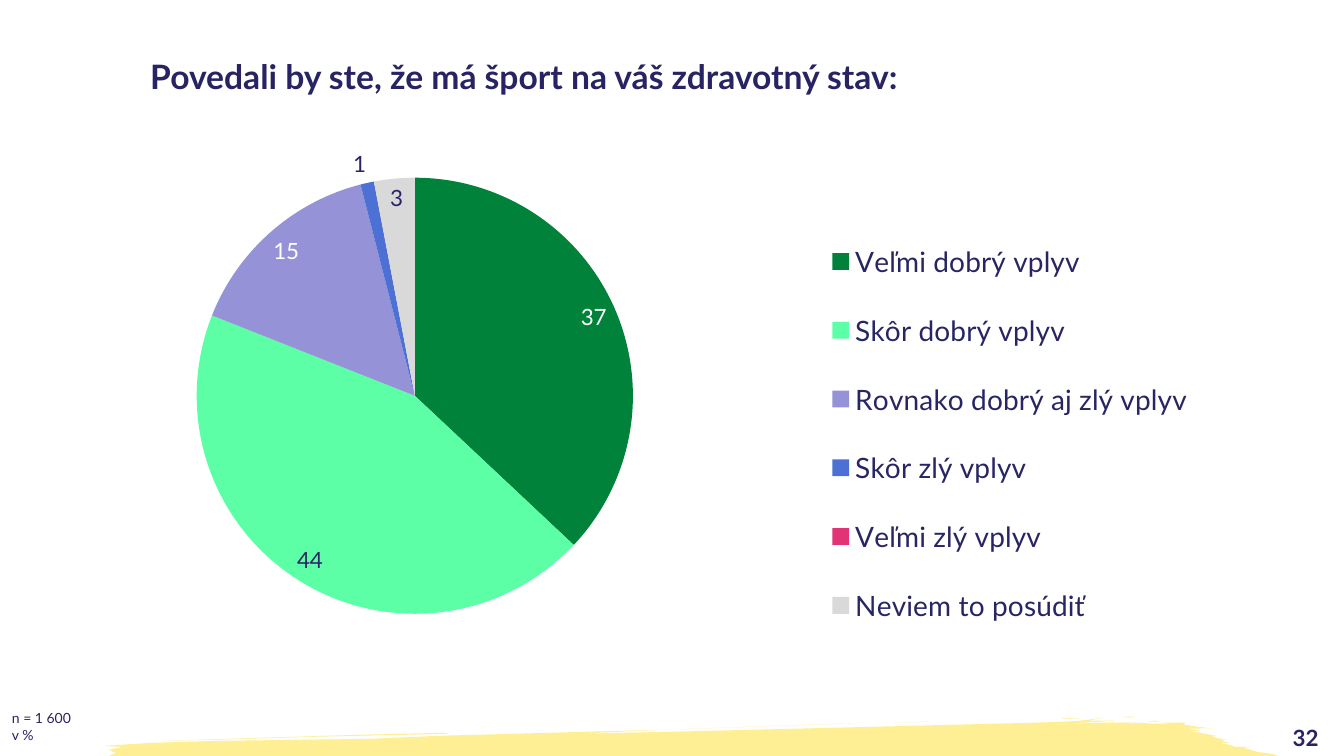
"""Build the slide with a pie chart on how sport affects health."""
import pptx
import pptx.chart.data
import pptx.dml.color
import pptx.enum.chart
import pptx.enum.text
import pptx.oxml
import pptx.oxml.ns
import pptx.util

Inches = pptx.util.Inches
Pt = pptx.util.Pt
Align = pptx.enum.text.PP_ALIGN
Anchor = pptx.enum.text.MSO_ANCHOR
LabelPosition = pptx.enum.chart.XL_LABEL_POSITION

TITLE = "Povedali by ste, že má šport na váš zdravotný stav:"
ANSWERS = [
    ("Veľmi dobrý vplyv", 37, "00823B"),
    ("Skôr dobrý vplyv", 44, "5DFFA6"),
    ("Rovnako dobrý aj zlý vplyv", 15, "9592D7"),
    ("Skôr zlý vplyv", 1, "4C70D4"),
    ("Veľmi zlý vplyv", 0, "E13377"),
    ("Neviem to posúdiť", 3, "D9D9D9"),
]
WHITE_LABELS = (0, 2)
HIDDEN_LABEL = 4
NOTE = ["n = 1 600", "v %"]
PAGE_NUMBER = ["32"]

THEME = {
    "font": "Lato", "title": "282463", "text": "282564", "white": "FFFFFF", "brush": "FEEF95",
    "title_size": 24, "legend_size": 20, "label_size": 16, "number_size": 16, "note_size": 10,
}
TITLE_BOX = (1.39, 0.26, 11, 1.04)
NUMBER_BOX = (12.56, 7.14, 0.78, 0.36)
CHART_BOX = (0.38, 1.42, 12.68, 5.54)
NOTE_BOX = (0.02, 6.99, 1.19, 0.44)
PLOT_LAYOUT = {"layoutTarget": "inner", "xMode": "edge", "yMode": "edge",
               "x": 0.091, "y": 0.062, "w": 0.407, "h": 0.781}
LEGEND_LAYOUT = {"xMode": "edge", "yMode": "edge", "x": 0.61, "y": 0.12, "w": 0.3, "h": 0.8}

BRUSH_STROKES = [
    [(1.15, 7.47), (1.08, 7.5), (0.84, 7.52), (1.05, 7.53), (1.15, 7.55), (1.04, 7.55),
     (1.16, 7.56), (1.13, 7.61), (1.35, 7.61), (1.3, 7.65), (1.36, 7.7), (1.3, 7.73),
     (1.44, 7.74), (1.52, 7.77), (1.73, 7.81), (1.82, 7.85), (2.77, 7.89), (4.04, 7.87),
     (5.64, 7.84), (7.24, 7.8), (8.76, 7.76), (10.14, 7.71), (11.53, 7.69), (12.21, 7.62),
     (12.43, 7.64), (12.6, 7.59), (12.5, 7.56), (12.35, 7.54), (12.55, 7.53), (12.66, 7.51),
     (12.58, 7.5), (12.68, 7.5), (12.62, 7.48), (12.47, 7.46), (12.34, 7.42), (12.4, 7.41),
     (12.25, 7.41), (12.2, 7.39), (12.1, 7.37), (12.19, 7.37), (12.11, 7.35), (12.16, 7.34),
     (12.02, 7.31), (12.06, 7.3), (11.9, 7.27), (11.78, 7.25), (11.91, 7.25), (11.78, 7.23),
     (11.94, 7.23), (11.78, 7.21), (12.03, 7.23), (11.74, 7.19), (11.76, 7.17), (11.51, 7.17),
     (11.66, 7.18), (11.46, 7.18), (11.26, 7.17), (10.83, 7.18), (11.28, 7.16), (10.6, 7.18),
     (11.05, 7.15), (10.79, 7.15), (10.94, 7.12), (10.72, 7.15), (10.56, 7.16), (10.25, 7.17),
     (8.69, 7.21), (6.66, 7.26), (5.75, 7.28), (6.54, 7.24), (6.18, 7.25), (4.35, 7.3),
     (3.67, 7.33), (2.18, 7.35), (1.49, 7.37), (1.03, 7.4), (1.21, 7.41), (1.08, 7.44)],
    [(3.54, 7.29), (1.63, 7.35), (2.12, 7.34), (3.11, 7.31), (4.45, 7.28), (4.41, 7.27)],
    [(8.56, 7.17), (6.6, 7.24), (8.35, 7.18)],
    [(10.73, 7.13), (10.54, 7.12), (10.54, 7.13)],
    [(11.19, 7.12), (11.26, 7.11), (11.14, 7.11)],
    [(9.14, 7.16), (8.87, 7.17), (9.23, 7.16)],
    [(11.38, 7.16), (11.51, 7.16), (11.45, 7.15)],
]


def color(value):
    return pptx.dml.color.RGBColor.from_string(value)


def format_font(font, size, value, bold=False):
    for name, setting in {"name": THEME["font"], "size": Pt(size), "bold": bold}.items():
        setattr(font, name, setting)
    font.color.rgb = color(value)


def write(shape, lines, size, value, bold=False, align=Align.LEFT, anchor=Anchor.TOP):
    frame = shape.text_frame
    frame.text = "\n".join(lines)
    settings = {"word_wrap": True, "vertical_anchor": anchor,
                "auto_size": pptx.enum.text.MSO_AUTO_SIZE.NONE}
    for name, setting in settings.items():
        setattr(frame, name, setting)
    for paragraph in frame.paragraphs:
        paragraph.alignment = align
        for run in paragraph.runs:
            format_font(run.font, size, value, bold)


def make_layout(settings):
    namespace = pptx.oxml.ns.nsdecls("c")
    parts = "".join(f'<c:{name} val="{value}"/>' for name, value in settings.items())
    return pptx.oxml.parse_xml(
        f"<c:layout {namespace}><c:manualLayout>{parts}</c:manualLayout></c:layout>")


def add_title(slide):
    title = slide.shapes.title
    for name, value in zip(("left", "top", "width", "height"), TITLE_BOX):
        setattr(title, name, Inches(value))
    write(title, [TITLE], THEME["title_size"], THEME["title"], True, anchor=Anchor.MIDDLE)
    title.text_frame.paragraphs[0].line_spacing = 0.9


def add_text(slide, box, *arguments, **options):
    shape = slide.shapes.add_textbox(*map(Inches, box))
    write(shape, *arguments, **options)


def add_brush(slide):
    strokes = [[(Inches(x), Inches(y)) for x, y in stroke] for stroke in BRUSH_STROKES]
    builder = slide.shapes.build_freeform(*strokes[0][0])
    for index, stroke in enumerate(strokes):
        if index:
            builder.move_to(*stroke[0])
        builder.add_line_segments(stroke[1:])
    shape = builder.convert_to_shape()
    shape.shadow.inherit = False
    shape.fill.solid()
    shape.fill.fore_color.rgb = color(THEME["brush"])
    shape.line.fill.background()


def add_pie(slide):
    names, values, colors = zip(*ANSWERS)
    data = pptx.chart.data.CategoryChartData(number_format="0")
    data.categories = names
    data.add_series("Series 1", values)
    chart = slide.shapes.add_chart(
        pptx.enum.chart.XL_CHART_TYPE.PIE, *map(Inches, CHART_BOX), data).chart
    format_font(chart.font, THEME["note_size"], THEME["text"])
    chart.has_title = False
    chart.has_legend = True
    chart.legend.position = pptx.enum.chart.XL_LEGEND_POSITION.RIGHT
    chart.legend.include_in_layout = False
    format_font(chart.legend.font, THEME["legend_size"], THEME["text"])
    plot = chart.plots[0]
    plot.vary_by_categories = True
    series = plot.series[0]
    labels = series.data_labels
    for name, setting in {"show_value": True, "number_format": "0",
                          "number_format_is_linked": False,
                          "position": LabelPosition.BEST_FIT}.items():
        setattr(labels, name, setting)
    format_font(labels.font, THEME["label_size"], THEME["text"])
    for index, value in enumerate(colors):
        fill = series.points[index].format.fill
        fill.solid()
        fill.fore_color.rgb = color(value)
    for index in WHITE_LABELS:
        label = series.points[index].data_label
        format_font(label.font, THEME["label_size"], THEME["white"])
        label.position = LabelPosition.BEST_FIT
    hide_label(series)
    place_parts(chart)


def hide_label(series):
    series.points[HIDDEN_LABEL].data_label.position = LabelPosition.BEST_FIT
    label = series._element.xpath(f'c:dLbls/c:dLbl[c:idx/@val="{HIDDEN_LABEL}"]')[0]
    for child in list(label)[1:]:
        label.remove(child)
    namespace = pptx.oxml.ns.nsdecls("c")
    label.append(pptx.oxml.parse_xml(f'<c:delete {namespace} val="1"/>'))


def place_parts(chart):
    root = chart._chartSpace
    for layout in root.xpath("c:chart/c:plotArea/c:layout | c:chart/c:legend/c:layout"):
        layout.getparent().remove(layout)
    root.xpath("c:chart/c:plotArea")[0].insert(0, make_layout(PLOT_LAYOUT))
    root.xpath("c:chart/c:legend/c:legendPos")[0].addnext(make_layout(LEGEND_LAYOUT))


def main():
    presentation = pptx.Presentation()
    presentation.slide_width = Inches(13.33)
    presentation.slide_height = Inches(7.5)
    slide = presentation.slides.add_slide(presentation.slide_layouts[5])
    add_title(slide)
    add_text(slide, NUMBER_BOX, PAGE_NUMBER, THEME["number_size"], THEME["title"], True,
             align=Align.CENTER, anchor=Anchor.MIDDLE)
    add_brush(slide)
    add_pie(slide)
    add_text(slide, NOTE_BOX, NOTE, THEME["note_size"], THEME["text"])
    presentation.save("out.pptx")


if __name__ == "__main__":
    main()
